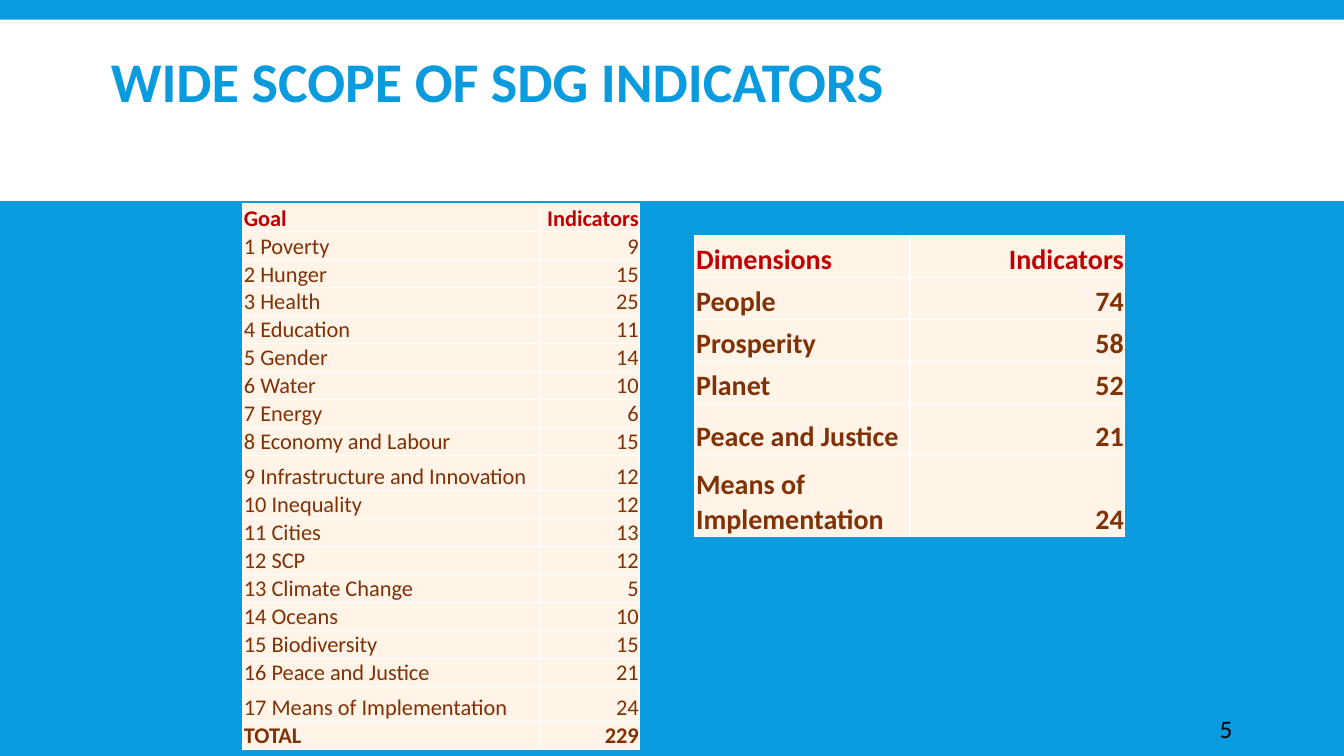
from dataclasses import dataclass

from lxml import etree
from pptx import Presentation
from pptx.dml.color import RGBColor
from pptx.enum.shapes import MSO_SHAPE
from pptx.enum.text import MSO_ANCHOR, MSO_AUTO_SIZE, PP_ALIGN
from pptx.oxml.ns import qn
from pptx.slide import Slide
from pptx.util import Pt

RECT = MSO_SHAPE.RECTANGLE
MIDDLE, BOTTOM = MSO_ANCHOR.MIDDLE, MSO_ANCHOR.BOTTOM
LEFT, RIGHT = PP_ALIGN.LEFT, PP_ALIGN.RIGHT
NO_FIT = MSO_AUTO_SIZE.NONE
TITLE_ONLY = 5


@dataclass(frozen=True)
class Theme:
    font: str = "Calibri"
    blue: str = "099BDD"
    white: str = "FFFFFF"
    black: str = "000000"
    cream: str = "FFF4E7"
    red: str = "C00000"
    brown: str = "803106"
    title: float = 40
    number: float = 18
    goals: float = 16
    dimensions: float = 20


@dataclass(frozen=True)
class IndicatorTable:
    left: float
    top: float
    cols: tuple[float, float]
    row: float
    tall_rows: dict[int, float]
    size: float
    bold_rows: set[int]
    rows: list[tuple[str, str]]


THEME = Theme()

GOALS = IndicatorTable(
    left=173.5, top=145.5, cols=(212.5, 71), row=20, tall_rows={9: 25, 17: 25},
    size=THEME.goals, bold_rows={0, 18},
    rows=[
        ("Goal", "Indicators"),
        ("1 Poverty", "9"),
        ("2 Hunger", "15"),
        ("3 Health", "25"),
        ("4 Education", "11"),
        ("5 Gender", "14"),
        ("6 Water", "10"),
        ("7 Energy", "6"),
        ("8 Economy and Labour", "15"),
        ("9 Infrastructure and Innovation", "12"),
        ("10 Inequality", "12"),
        ("11 Cities", "13"),
        ("12 SCP", "12"),
        ("13 Climate Change", "5"),
        ("14 Oceans", "10"),
        ("15 Biodiversity", "15"),
        ("16 Peace and Justice", "21"),
        ("17 Means of Implementation", "24"),
        ("TOTAL", "229"),
    ],
)

DIMENSIONS = IndicatorTable(
    left=496.5, top=168, cols=(153.5, 153.5), row=30, tall_rows={4: 36.5, 5: 59},
    size=THEME.dimensions, bold_rows=set(range(6)),
    rows=[
        ("Dimensions", "Indicators"),
        ("People", "74"),
        ("Prosperity", "58"),
        ("Planet", "52"),
        ("Peace and Justice", "21"),
        ("Means of Implementation", "24"),
    ],
)


def rgb(value: str) -> RGBColor:
    return RGBColor.from_string(value)


def put_text(tf, text: str, *, size: float, color: str, bold: bool = False,
             align=LEFT, spacing: float = 1.0) -> None:
    p = tf.paragraphs[0]
    p.alignment = align
    p.line_spacing = spacing
    r = p.add_run()
    r.text = text
    r.font.name = THEME.font
    r.font.size = Pt(size)
    r.font.bold = bold
    r.font.color.rgb = rgb(color)


def add_borders(cell) -> None:
    tc_pr = cell._tc.get_or_add_tcPr()
    for side in ("a:lnL", "a:lnR", "a:lnT", "a:lnB"):
        ln = etree.SubElement(tc_pr, qn(side), w=str(Pt(1)))
        fill = etree.SubElement(ln, qn("a:solidFill"))
        etree.SubElement(fill, qn("a:srgbClr"), val=THEME.white)


def add_indicator_table(slide: Slide, data: IndicatorTable) -> None:
    heights = [data.tall_rows.get(i, data.row) for i in range(len(data.rows))]
    table = slide.shapes.add_table(
        len(data.rows), len(data.cols), Pt(data.left), Pt(data.top),
        Pt(sum(data.cols)), Pt(sum(heights))).table
    table.first_row = table.horz_banding = False
    for column, width in zip(table.columns, data.cols):
        column.width = Pt(width)
    for i, (values, height) in enumerate(zip(data.rows, heights)):
        table.rows[i].height = Pt(height)
        for j, value in enumerate(values):
            cell = table.cell(i, j)
            cell.margin_left = cell.margin_right = cell.margin_top = Pt(0.75)
            cell.margin_bottom = Pt(0)
            cell.vertical_anchor = BOTTOM
            add_borders(cell)
            cell.fill.solid()
            cell.fill.fore_color.rgb = rgb(THEME.cream)
            put_text(cell.text_frame, value, size=data.size,
                     color=THEME.brown if i else THEME.red,
                     bold=i in data.bold_rows, align=RIGHT if j else LEFT)


def add_title(slide: Slide, text: str) -> None:
    sp = slide.shapes.title
    sp.left, sp.top, sp.width, sp.height = Pt(72), Pt(22.5), Pt(816), Pt(119)
    tf = sp.text_frame
    tf.auto_size = NO_FIT
    tf.vertical_anchor = MIDDLE
    tf.margin_bottom = Pt(45)  # lifts the title above the middle of the band
    put_text(tf, text, size=THEME.title, color=THEME.blue, bold=True, spacing=0.85)


def add_title_band(slide: Slide) -> None:
    sp = slide.shapes.add_shape(RECT, Pt(0), Pt(14), Pt(960), Pt(129.5))
    sp.shadow.inherit = False
    sp.fill.solid()
    sp.fill.fore_color.rgb = rgb(THEME.white)
    sp.line.fill.background()
    slide.shapes.title._element.addprevious(sp._element)


def add_slide_number(slide: Slide, number: str) -> None:
    tf = slide.shapes.add_textbox(Pt(867.5), Pt(505.5), Pt(74), Pt(29)).text_frame
    tf.word_wrap = True
    tf.vertical_anchor = MIDDLE
    tf.margin_left = Pt(3.6)
    put_text(tf, number, size=THEME.number, color=THEME.black)


def main() -> None:
    prs = Presentation()
    prs.slide_width, prs.slide_height = Pt(960), Pt(540)
    slide = prs.slides.add_slide(prs.slide_layouts[TITLE_ONLY])

    # Background and heading
    slide.background.fill.solid()
    slide.background.fill.fore_color.rgb = rgb(THEME.blue)
    add_title_band(slide)
    add_title(slide, "WIDE SCOPE OF SDG INDICATORS")
    add_slide_number(slide, "5")

    # Indicator counts by goal and by dimension
    for data in (GOALS, DIMENSIONS):
        add_indicator_table(slide, data)

    prs.save("out.pptx")


if __name__ == "__main__":
    main()
